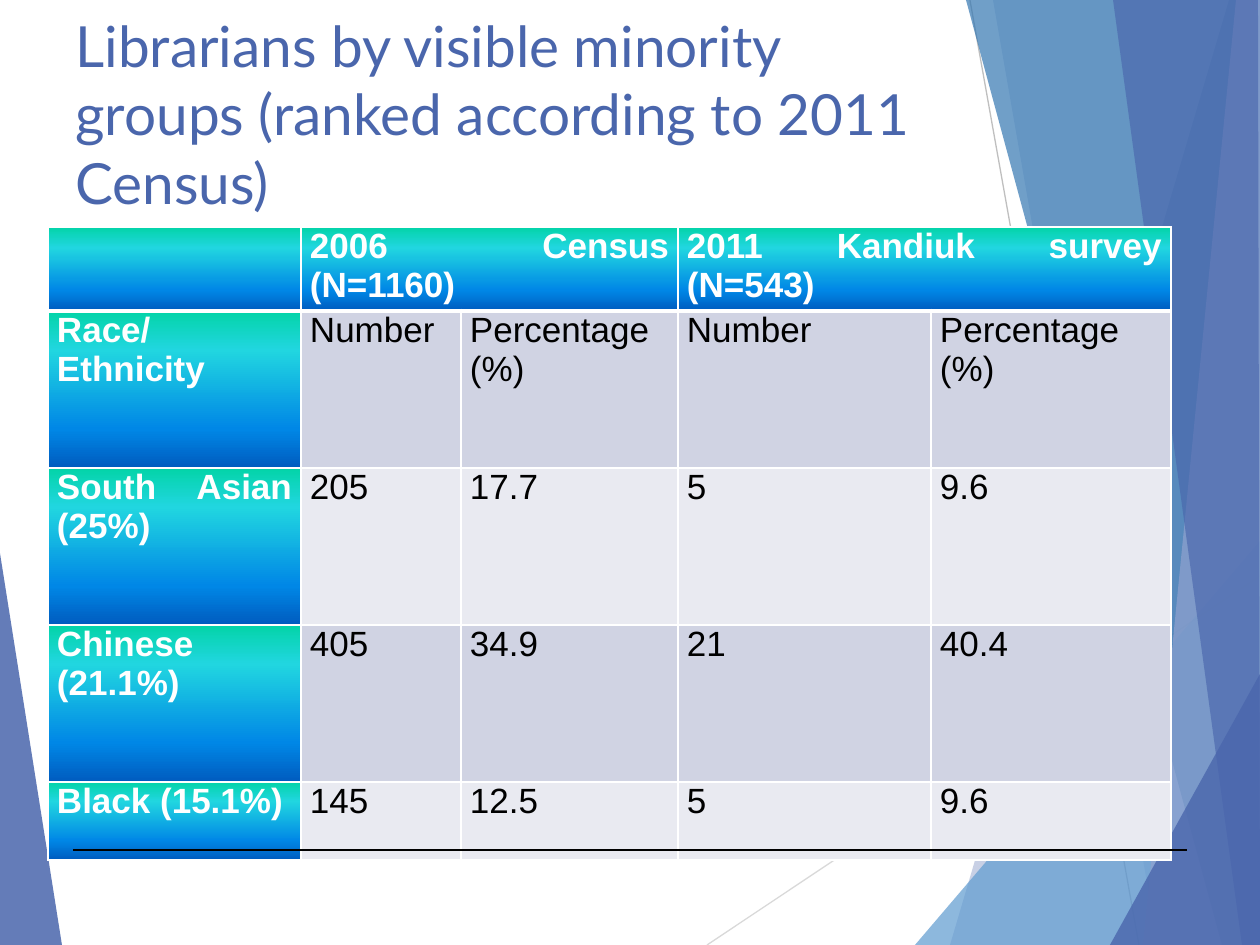
from lxml import etree
from pptx import Presentation
from pptx.dml.color import RGBColor
from pptx.enum.shapes import MSO_CONNECTOR
from pptx.enum.text import MSO_ANCHOR, PP_ALIGN
from pptx.oxml.ns import qn
from pptx.util import Emu, Pt

STRAIGHT = MSO_CONNECTOR.STRAIGHT
TOP = MSO_ANCHOR.TOP
JUSTIFY = PP_ALIGN.JUSTIFY
EMU_PER_PX = 914400 / 126
WIDTH, HEIGHT = 1260, 945

BLUE = "4A66AC"
WHITE = "FFFFFF"
BLACK = "000000"
BANDS = ("E9EAF1", "D0D3E3")
GRADIENT = ((0, "03D4A8"), (25, "21D6E0"), (75, "0087E6"), (100, "005CBF"))

LEFT_FACET = (((0, 553), (62, 945), (0, 945)), BLUE, 85)
RIGHT_FACETS = (
    (((1229, 0), (950, 945), (1260, 945), (1260, 0)), BLUE, 30),
    (((993, 0), (1158, 945), (1260, 945), (1260, 0)), BLUE, 20),
    (((915, 945), (1260, 541), (1260, 945)), "629DD1", 72),
    (((966, 0), (1222, 945), (1260, 945), (1260, 0)), "3477B2", 70),
    (((1236, 0), (1143, 945), (1260, 945), (1260, 0)), "90A2CF", 70),
    (((1113, 0), (1242, 945), (1260, 945), (1258, 0)), BLUE, 65),
    (((1110, 945), (1260, 674), (1260, 945)), BLUE, 80),
)

TITLE = "Librarians by visible minority groups (ranked according to 2011 Census)"
COLUMNS = (253, 160, 217, 253, 240)
ROWS = (78, 157, 157, 157, 78)
DATA = (
    ("", "2006 Census (N=1160)", "", "2011 Kandiuk survey (N=543)", ""),
    ("Race/Ethnicity", "Number", "Percentage (%)", "Number", "Percentage (%)"),
    ("South Asian (25%)", "205", "17.7", "5", "9.6"),
    ("Chinese (21.1%)", "405", "34.9", "21", "40.4"),
    ("Black (15.1%)", "145", "12.5", "5", "9.6"),
)


def px(n):
    """Convert pixels to EMU."""
    return Emu(round(n * EMU_PER_PX))


def rgb(value):
    """Turn a hex string into a colour."""
    return RGBColor.from_string(value)


def add_facet(s, points, color, opacity):
    """Draw a translucent polygon."""
    corners = [(px(x), px(y)) for x, y in points]
    builder = s.shapes.build_freeform(*corners[0], scale=1.0)
    builder.add_line_segments(corners[1:], close=True)
    sp = builder.convert_to_shape()
    sp.shadow.inherit = False
    sp.line.fill.background()
    sp.fill.solid()
    sp.fill.fore_color.rgb = rgb(color)
    clr = sp.fill._xPr.find(qn("a:solidFill"))[0]
    etree.SubElement(clr, qn("a:alpha"), val=str(opacity * 1000))


def add_line(s, x1, y1, x2, y2, color):
    """Draw a thin straight line."""
    ln = s.shapes.add_connector(STRAIGHT, px(x1), px(y1), px(x2), px(y2))
    ln.line.color.rgb = rgb(color)
    ln.line.width = Pt(0.75)
    etree.SubElement(ln._element.spPr, qn("a:effectLst"))


def add_run(p, text, font, size, color, bold=False):
    """Add one formatted run to a paragraph."""
    r = p.add_run()
    r.text = text
    r.font.name = font
    r.font.size = Pt(size)
    r.font.bold = bold
    r.font.color.rgb = rgb(color)


def add_title(s, x, y, w, h):
    """Add the slide title."""
    tf = s.shapes.add_textbox(px(x), px(y), px(w), px(h)).text_frame
    tf.word_wrap = True
    tf.vertical_anchor = TOP
    add_run(tf.paragraphs[0], TITLE, "Lato", 32.4, BLUE)


def set_gradient(cell):
    """Fill a cell with the vertical gradient."""
    grad = etree.SubElement(cell._tc.get_or_add_tcPr(), qn("a:gradFill"), rotWithShape="1")
    stops = etree.SubElement(grad, qn("a:gsLst"))
    for pos, color in GRADIENT:
        gs = etree.SubElement(stops, qn("a:gs"), pos=str(pos * 1000))
        etree.SubElement(gs, qn("a:srgbClr"), val=color)
    etree.SubElement(grad, qn("a:lin"), ang="5400000", scaled="0")


def set_borders(cell, top, bottom):
    """Give a cell white borders with the given point widths."""
    tcPr = cell._tc.get_or_add_tcPr()
    for i, (side, width) in enumerate((("L", 1), ("R", 1), ("T", top), ("B", bottom))):
        ln = etree.Element(qn(f"a:ln{side}"), w=str(Pt(width)))
        fill = etree.SubElement(ln, qn("a:solidFill"))
        etree.SubElement(fill, qn("a:srgbClr"), val=WHITE)
        tcPr.insert(i, ln)


def format_cell(cell, text, row, col):
    """Fill, border and write one table cell."""
    heading = row == 0 or col == 0
    cell.margin_left = cell.margin_right = px(9)
    cell.margin_top = cell.margin_bottom = 0
    if heading:
        set_gradient(cell)
    else:
        cell.fill.solid()
        cell.fill.fore_color.rgb = rgb(BANDS[row % 2])
    set_borders(cell, 3 if row == 1 else 1, 3 if row == 0 else 1)
    if text:
        p = cell.text_frame.paragraphs[0]
        p.alignment = JUSTIFY
        add_run(p, text, "Arial", 20, WHITE if heading else BLACK, heading)


def add_census_table(s, x, y):
    """Add the table of librarians by group."""
    frame = s.shapes.add_table(len(ROWS), len(COLUMNS), px(x), px(y),
                               px(sum(COLUMNS)), px(sum(ROWS)))
    table = frame.table
    for column, width in zip(table.columns, COLUMNS):
        column.width = px(width)
    for row, height in zip(table.rows, ROWS):
        row.height = px(height)
    for i, values in enumerate(DATA):
        for j, text in enumerate(values):
            format_cell(table.cell(i, j), text, i, j)
    for j in (1, 3):
        table.cell(0, j).merge(table.cell(0, j + 1))


def main():
    """Build and save the slide."""
    prs = Presentation()
    prs.slide_width, prs.slide_height = px(WIDTH), px(HEIGHT)
    s = prs.slides.add_slide(prs.slide_layouts[6])
    add_facet(s, *LEFT_FACET)
    add_line(s, 707, 945, 1260, 576, "D9D9D9")
    add_line(s, 970, 0, 1139, 945, "BFBFBF")
    for facet in RIGHT_FACETS:
        add_facet(s, *facet)
    add_title(s, 63, 5, 874, 181)
    add_census_table(s, 48, 227)
    add_line(s, 73, 850, 1187, 850, BLACK)
    prs.save("out.pptx")


if __name__ == "__main__":
    main()
